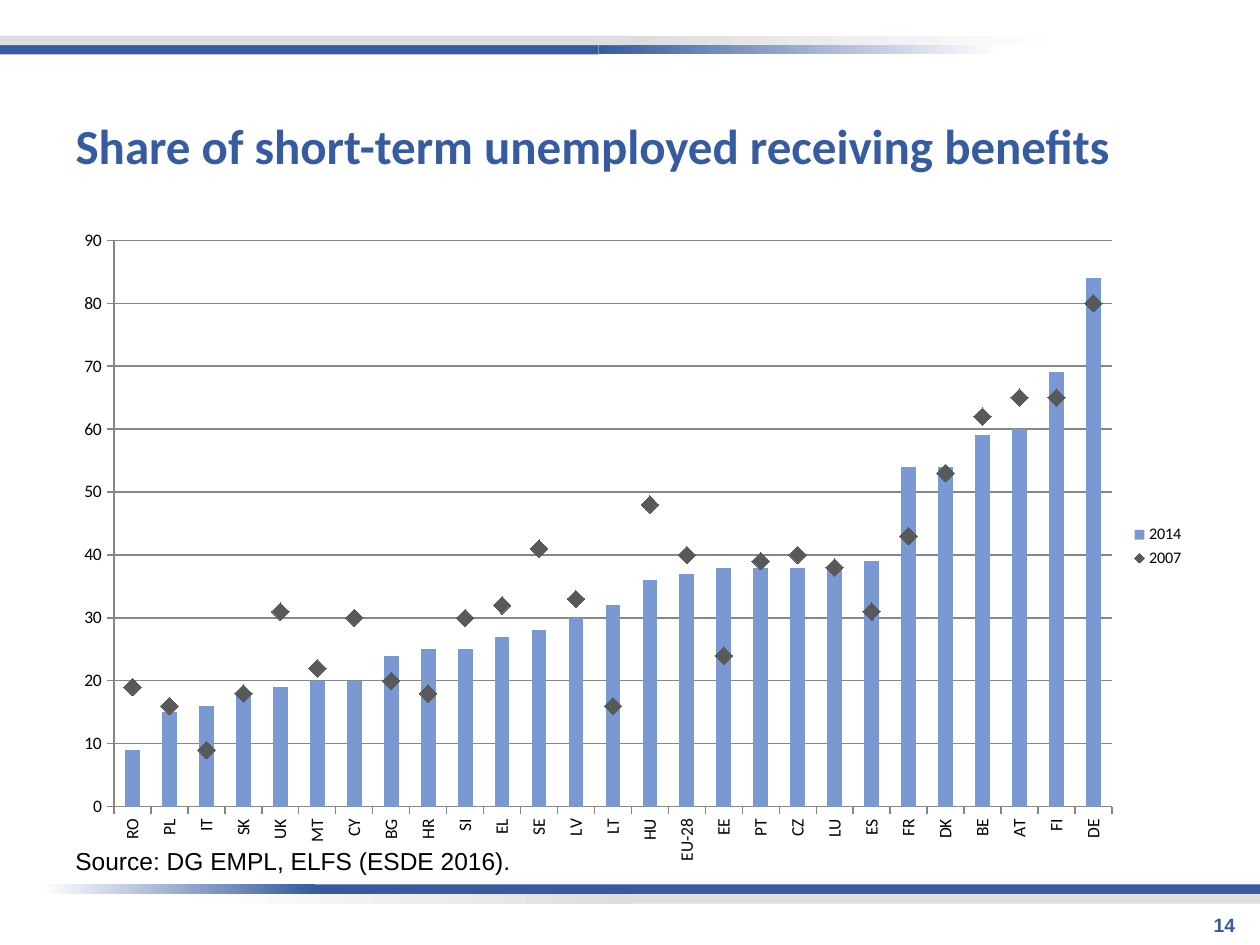
from copy import deepcopy
from dataclasses import dataclass

from pptx import Presentation
from pptx.chart.data import CategoryChartData
from pptx.dml.color import RGBColor
from pptx.enum.chart import XL_CHART_TYPE, XL_LEGEND_POSITION, XL_MARKER_STYLE, XL_TICK_MARK
from pptx.enum.shapes import MSO_SHAPE
from pptx.enum.text import MSO_ANCHOR, PP_ALIGN
from pptx.oxml import parse_xml
from pptx.oxml.ns import nsdecls, qn
from pptx.util import Cm, Pt

RECTANGLE = MSO_SHAPE.RECTANGLE
COLUMNS = XL_CHART_TYPE.COLUMN_CLUSTERED
LEGEND_RIGHT = XL_LEGEND_POSITION.RIGHT
DIAMOND = XL_MARKER_STYLE.DIAMOND
TICK_OUT, TICK_NONE = XL_TICK_MARK.OUTSIDE, XL_TICK_MARK.NONE
MIDDLE, TOP = MSO_ANCHOR.MIDDLE, MSO_ANCHOR.TOP
LEFT, RIGHT = PP_ALIGN.LEFT, PP_ALIGN.RIGHT


@dataclass(frozen=True)
class Theme:
    """Colours, fonts and type sizes of the slide."""
    blue: str = "365BA0"
    silver: str = "DDDDDD"
    white: str = "FFFFFF"
    black: str = "000000"
    column: str = "7A99D2"
    marker: str = "595959"
    grid: str = "868686"
    heading_font: str = "Calibri"
    text_font: str = "Arial"
    title_size: float = 28
    source_size: float = 14
    number_size: float = 11
    axis_size: float = 10
    legend_size: float = 9.2


THEME = Theme()
BAND_HEIGHT = 0.19
COUNTRIES = ("RO PL IT SK UK MT CY BG HR SI EL SE LV LT HU EU-28 EE PT CZ LU ES "
             "FR DK BE AT FI DE").split()
SHARES = {
    "2014": (9, 15, 16, 18, 19, 20, 20, 24, 25, 25, 27, 28, 30, 32, 36, 37, 38, 38,
             38, 38, 39, 54, 54, 59, 60, 69, 84),
    "2007": (19, 16, 9, 18, 31, 22, 30, 20, 18, 30, 32, 41, 33, 16, 48, 40, 24, 39,
             40, 38, 31, 43, 53, 62, 65, 65, 80),
}


def rgb(value):
    """Turn a hex string into a colour."""
    return RGBColor.from_string(value)


def apply(target, values):
    """Set every attribute named in a dict of format values."""
    for name, value in values.items():
        setattr(target, name, value)


def style_font(font, name, size, colour, bold=False):
    """Give a font its face, size, colour and weight."""
    apply(font, {"name": name, "size": Pt(size), "bold": bold})
    font.color.rgb = rgb(colour)


def place(shape, box):
    """Move a shape to a box given in centimetres."""
    apply(shape, dict(zip(("left", "top", "width", "height"), map(Cm, box))))


def write(shape, text, frame_format, align, font_values):
    """Write one formatted paragraph into a shape."""
    frame = shape.text_frame
    apply(frame, frame_format)
    para = frame.paragraphs[0]
    para.alignment = align
    span = para.add_run()
    span.text = text
    style_font(span.font, *font_values)


def add_strip(page, start, end, top):
    """Add a borderless rectangle between two horizontal positions."""
    strip = page.shapes.add_shape(
        RECTANGLE, Cm(start), Cm(top), Cm(end - start), Cm(BAND_HEIGHT))
    strip.shadow.inherit = False
    strip.line.fill.background()
    return strip


def add_band(page, top, colour, solid, fade):
    """Add a band with a solid part that fades to white on one side."""
    bar = add_strip(page, *solid, top)
    bar.fill.solid()
    bar.fill.fore_color.rgb = rgb(colour)
    tail = add_strip(page, *fade, top)
    tail.fill.gradient()
    tail.fill.gradient_angle = 0
    ends = (colour, THEME.white) if fade[0] >= solid[1] else (THEME.white, colour)
    for stop, position, value in zip(tail.fill.gradient_stops, (0, 1), ends):
        stop.position = position
        stop.color.rgb = rgb(value)


def add_bands(page):
    """Draw the paired bands at the head and foot of the page."""
    for top, colour, solid, fade in (
        (0.91, THEME.blue, (0, 12.07), (12.07, 20.17)),
        (17.83, THEME.blue, (6.35, 25.4), (0.84, 6.35)),
        (0.72, THEME.silver, (0, 12.7), (12.7, 21.59)),
        (18.03, THEME.silver, (12.7, 25.4), (3.81, 12.7)),
    ):
        add_band(page, top, colour, solid, fade)


def add_title(page, box, text):
    """Fill and place the title placeholder."""
    title = page.shapes.title
    place(title, box)
    write(title, text, {"vertical_anchor": MIDDLE, "word_wrap": True}, LEFT,
          (THEME.heading_font, THEME.title_size, THEME.blue, True))


def add_label(page, box, text, align, font_values, wrap=True):
    """Add a text box with one line."""
    label = page.shapes.add_textbox(*map(Cm, box))
    write(label, text, {"vertical_anchor": TOP, "word_wrap": wrap}, align, font_values)


def move_to_markers(chart):
    """Turn the second column series into a line series on the same axes."""
    columns = chart.plots[0]._element
    series = columns.findall(qn("c:ser"))[1]
    for flag in series.findall(qn("c:invertIfNegative")):
        series.remove(flag)
    lines = parse_xml(
        f'<c:lineChart {nsdecls("c")}><c:grouping val="standard"/>'
        '<c:varyColors val="0"/><c:marker val="1"/></c:lineChart>')
    lines.insert(2, series)
    for axis_id in columns.findall(qn("c:axId")):
        lines.append(deepcopy(axis_id))
    columns.addnext(lines)


def set_plot_layout(chart, x, y, w, h):
    """Fix the inner plot area as fractions of the chart."""
    area = chart.plots[0]._element.getparent()
    for layout in area.findall(qn("c:layout")):
        area.remove(layout)
    sizes = "".join(f'<c:{name} val="{value}"/>'
                    for name, value in (("x", x), ("y", y), ("w", w), ("h", h)))
    area.insert(0, parse_xml(
        f'<c:layout {nsdecls("c")}><c:manualLayout><c:layoutTarget val="inner"/>'
        f'<c:xMode val="edge"/><c:yMode val="edge"/>{sizes}</c:manualLayout></c:layout>'))


def style_axes(chart):
    """Format both axes and the gridlines."""
    category, value = chart.category_axis, chart.value_axis
    apply(value, {"minimum_scale": 0, "maximum_scale": 90, "major_unit": 10,
                  "has_major_gridlines": True})
    apply(value.tick_labels, {"number_format": "0", "number_format_is_linked": False})
    for axis in (category, value):
        apply(axis, {"major_tick_mark": TICK_OUT, "minor_tick_mark": TICK_NONE})
        style_font(axis.tick_labels.font, THEME.heading_font, THEME.axis_size, THEME.black)
    for part in (category, value, value.major_gridlines):
        part.format.line.color.rgb = rgb(THEME.grid)
        part.format.line.width = Pt(0.75)
    category._element.find(qn("c:txPr")).find(qn("a:bodyPr")).set("rot", "-5400000")


def add_share_chart(page, box):
    """Add the columns for 2014 with the diamonds for 2007."""
    data = CategoryChartData(number_format="0")
    data.categories = COUNTRIES
    for year, shares in SHARES.items():
        data.add_series(year, shares)
    chart = page.shapes.add_chart(COLUMNS, *map(Cm, box), data).chart
    apply(chart, {"has_title": False, "has_legend": True})
    style_font(chart.font, THEME.heading_font, THEME.axis_size, THEME.black)
    apply(chart.legend, {"position": LEGEND_RIGHT, "include_in_layout": False})
    style_font(chart.legend.font, THEME.heading_font, THEME.legend_size, THEME.black)
    move_to_markers(chart)
    set_plot_layout(chart, 0.045, 0.03, 0.88, 0.87)
    style_axes(chart)
    columns, lines = chart.plots
    apply(columns, {"gap_width": 150, "vary_by_categories": False})
    fill = columns.series[0].format.fill
    fill.solid()
    fill.fore_color.rgb = rgb(THEME.column)
    diamonds = lines.series[0]
    diamonds.smooth = False
    diamonds.format.line.fill.background()
    apply(diamonds.marker, {"style": DIAMOND, "size": 10})
    diamonds.marker.format.fill.solid()
    diamonds.marker.format.fill.fore_color.rgb = rgb(THEME.marker)
    diamonds.marker.format.line.color.rgb = rgb(THEME.marker)


def main():
    """Build the deck and save it."""
    deck = Presentation()
    apply(deck, {"slide_width": Cm(25.4), "slide_height": Cm(19.05)})
    page = deck.slides.add_slide(deck.slide_layouts[5])
    add_bands(page)
    add_title(page, (1.27, 1.7, 22.86, 2.44),
              "Share of short-term unemployed receiving benefits")
    add_label(page, (19.23, 18.29, 5.92, 0.7), "14", RIGHT,
              (THEME.text_font, THEME.number_size, THEME.blue, True))
    add_share_chart(page, (1.27, 4.45, 22.86, 13.13))
    add_label(page, (1.27, 16.94, 9.47, 0.86), "Source: DG EMPL, ELFS (ESDE 2016).", LEFT,
              (THEME.text_font, THEME.source_size, THEME.black), wrap=False)
    deck.save("out.pptx")


if __name__ == "__main__":
    main()
